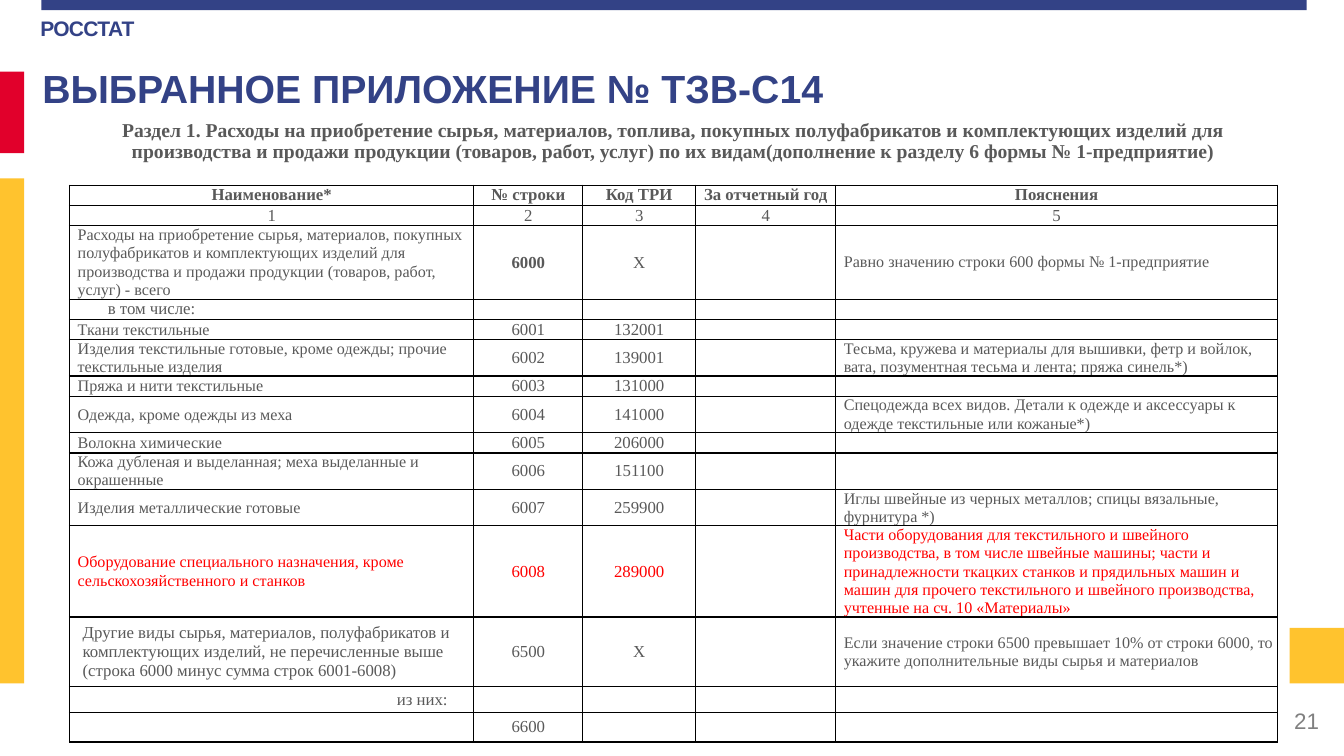
from dataclasses import dataclass

from lxml.etree import SubElement
from pptx import Presentation
from pptx.dml.color import RGBColor as Rgb
from pptx.enum.shapes import MSO_SHAPE as Shape
from pptx.enum.text import MSO_ANCHOR as Anchor, MSO_AUTO_SIZE as Fit, PP_ALIGN as Align
from pptx.oxml.ns import qn
from pptx.util import Inches, Pt


@dataclass(frozen=True)
class Theme:
    navy: str = "334286"
    red: str = "E1002B"
    yellow: str = "FFC32E"
    ink: str = "595959"
    alert: str = "FF0000"
    grey: str = "808080"
    border: str = "000000"
    sans: str = "Arial"
    serif: str = "Times New Roman"
    title: float = 28
    number: float = 16
    agency: float = 15
    section: float = 14
    table: float = 12
    detail: float = 11.5
    blank: int = 8
    detail_leading: float = 13


SECTION = ("Раздел 1. Расходы на приобретение сырья, материалов, топлива, покупных полуфабрикатов "
           "и комплектующих изделий для производства и продажи продукции (товаров, работ, услуг) "
           "по их видам(дополнение к разделу 6 формы № 1-предприятие)")
HEADINGS = ["Наименование*", "№ строки", "Код ТРИ", "За отчетный год", "Пояснения"]
EXPENSES = [
    (0.73, "Расходы на приобретение сырья, материалов, покупных полуфабрикатов и комплектующих изделий "
           "для производства и продажи продукции (товаров, работ, услуг) - всего",
     "6000", "Х", "Равно значению строки 600 формы № 1-предприятие"),
    (0.18, "в том числе:", "", "", ""),
    (0.19, "Ткани текстильные", "6001", "132001", ""),
    (0.36, "Изделия текстильные готовые, кроме одежды; прочие текстильные изделия", "6002", "139001",
     "Тесьма, кружева и материалы для вышивки, фетр и войлок, вата, позументная тесьма и лента; "
     "пряжа синель*)"),
    (0.19, "Пряжа и нити текстильные", "6003", "131000", ""),
    (0.36, "Одежда, кроме одежды из меха", "6004", "141000",
     "Спецодежда всех видов. Детали к одежде и аксессуары к одежде текстильные или кожаные*)"),
    (0.19, "Волокна химические", "6005", "206000", ""),
    (0.36, "Кожа дубленая и выделанная; меха выделанные и окрашенные", "6006", "151100", ""),
    (0.36, "Изделия металлические готовые", "6007", "259900",
     "Иглы швейные из черных металлов; спицы вязальные, фурнитура *)"),
    (0.9, "Оборудование специального назначения, кроме сельскохозяйственного и станков",
     "6008", "289000",
     "Части оборудования для текстильного и швейного производства, в том числе швейные машины; "
     "части и принадлежности ткацких станков и прядильных машин и машин для прочего текстильного "
     "и швейного производства, учтенные на сч. 10 «Материалы»"),
    (0.69, "Другие виды сырья, материалов, полуфабрикатов и комплектующих изделий, не перечисленные "
           "выше (строка 6000 минус сумма строк 6001-6008)", "6500", "Х",
     "Если значение строки 6500 превышает 10% от строки 6000, то укажите дополнительные виды "
     "сырья и материалов"),
    (0.26, "из них:", "", "", ""),
    (0.29, "", "6600", "", ""),
]
NAME_FORMATS = {
    "в том числе:": {"left": 0.38},
    "из них:": {"right": 0.26, "align": Align.RIGHT},
    EXPENSES[10][1]: {"left": 0.13},
}


def apply(target, formats):
    for name, value in formats.items():
        setattr(target, name, value)


class SlideBuilder:
    def __init__(self, slide, theme):
        self.slide = slide
        self.theme = theme

    def add_text(self, paragraph, text, size, color, font, bold=False, align=Align.LEFT,
                 leading=None, tracking=None):
        apply(paragraph, {"alignment": align, "space_before": Pt(0), "line_spacing": leading})
        run = paragraph.add_run()
        run.text = text
        apply(run.font, {"size": Pt(size), "name": font, "bold": bold})
        run.font.color.rgb = Rgb.from_string(color)
        if tracking:
            run._r.get_or_add_rPr().set("spc", str(tracking))

    def band(self, left, top, width, height, color):
        band = self.slide.shapes.add_shape(
            Shape.RECTANGLE, Inches(left), Inches(top), Inches(width), Inches(height))
        band.shadow.inherit = False
        band.fill.solid()
        band.fill.fore_color.rgb = Rgb.from_string(color)
        band.line.fill.background()

    def title(self, text, left, top, width, height):
        heading = self.slide.shapes.title
        apply(heading, {"left": Inches(left), "top": Inches(top),
                        "width": Inches(width), "height": Inches(height)})
        apply(heading.text_frame, {"word_wrap": True, "auto_size": Fit.NONE,
                                   "vertical_anchor": Anchor.TOP})
        self.add_text(heading.text_frame.paragraphs[0], text, self.theme.title, self.theme.navy,
                      self.theme.sans, bold=True)

    def label(self, text, left, top, width, height, size, color, frame, **style):
        box = self.slide.shapes.add_textbox(Inches(left), Inches(top), Inches(width), Inches(height))
        apply(box.text_frame, {"word_wrap": True, **frame})
        self.add_text(box.text_frame.paragraphs[0], text, size, color, self.theme.sans, **style)

    def borders(self, cell, visible):
        properties = cell._tc.get_or_add_tcPr()
        for order, side in enumerate("LRTB"):
            line = SubElement(properties, qn(f"a:ln{side}"), w=str(Pt(1)))
            if side in visible:
                fill = SubElement(line, qn("a:solidFill"))
                SubElement(fill, qn("a:srgbClr"), val=self.theme.border)
            else:
                SubElement(line, qn("a:noFill"))
            properties.insert(order, line)

    def cell(self, cell, text, size=None, color=None, left=0, right=0, bottom=0, visible="LRTB",
             **style):
        apply(cell, {"margin_left": Inches(left), "margin_right": Inches(right), "margin_top": 0,
                     "margin_bottom": Inches(bottom), "vertical_anchor": Anchor.MIDDLE})
        cell.fill.background()
        self.borders(cell, visible)
        paragraph = cell.text_frame.paragraphs[0]
        if text:
            self.add_text(paragraph, text, size or self.theme.table, color or self.theme.ink,
                          self.theme.serif, **style)
        else:
            SubElement(paragraph._p, qn("a:endParaRPr"), sz=str(self.theme.blank * 100))

    def expense_table(self, left, top, widths):
        heights = [0.63, 0.19, 0.19] + [row[0] for row in EXPENSES]
        table = self.slide.shapes.add_table(
            len(heights), len(widths), Inches(left), Inches(top),
            Inches(sum(widths)), Inches(sum(heights))).table
        apply(table, {"first_row": False, "horz_banding": False})
        for column, width in zip(table.columns, widths):
            column.width = Inches(width)
        for row, height in zip(table.rows, heights):
            row.height = Inches(height)

        table.cell(0, 0).merge(table.cell(0, len(widths) - 1))
        for column in range(len(widths)):
            self.cell(table.cell(0, column), "" if column else SECTION, self.theme.section,
                      bottom=0.2, visible="B", bold=True, align=Align.CENTER)
            self.cell(table.cell(1, column), HEADINGS[column], bold=True, align=Align.CENTER)
            self.cell(table.cell(2, column), str(column + 1), align=Align.CENTER)

        detail = {"left": 0.08, "size": self.theme.detail, "leading": Pt(self.theme.detail_leading)}
        centred = {"align": Align.CENTER}
        for row, (_, name, number, code, note) in enumerate(EXPENSES, start=3):
            color = self.theme.alert if number == "6008" else self.theme.ink
            formats = [NAME_FORMATS.get(name, detail), {**centred, "bold": number == "6000"},
                       centred, centred, detail]
            for column, (text, style) in enumerate(zip((name, number, code, "", note), formats)):
                self.cell(table.cell(row, column), text, color=color, **style)


def main():
    presentation = Presentation()
    apply(presentation, {"slide_width": Inches(13.33), "slide_height": Inches(7.5)})
    theme = Theme()
    page = SlideBuilder(presentation.slides.add_slide(presentation.slide_layouts[5]), theme)

    page.label("РОССТАТ", 0.39, 0.13, 1.15, 0.32, theme.agency, theme.navy,
               {"margin_left": Inches(0.01), "margin_right": 0, "margin_top": Inches(0.02),
                "margin_bottom": 0}, bold=True, tracking=-50)
    for band in [(0.41, 0, 12.55, 0.1, theme.navy), (0, 0.71, 0.24, 0.81, theme.red),
                 (0, 1.77, 0.24, 5.01, theme.yellow), (12.79, 6.23, 0.54, 0.55, theme.yellow)]:
        page.band(*band)
    page.label("21", 10.18, 6.95, 3, 0.4, theme.number, theme.grey,
               {"vertical_anchor": Anchor.MIDDLE}, align=Align.RIGHT)
    page.title("ВЫБРАННОЕ ПРИЛОЖЕНИЕ № ТЗВ-С14", 0.32, 0.59, 12.6, 1.02)
    page.expense_table(0.69, 1.17, [4.01, 1.08, 1.12, 1.39, 4.38])
    presentation.save("out.pptx")


if __name__ == "__main__":
    main()
